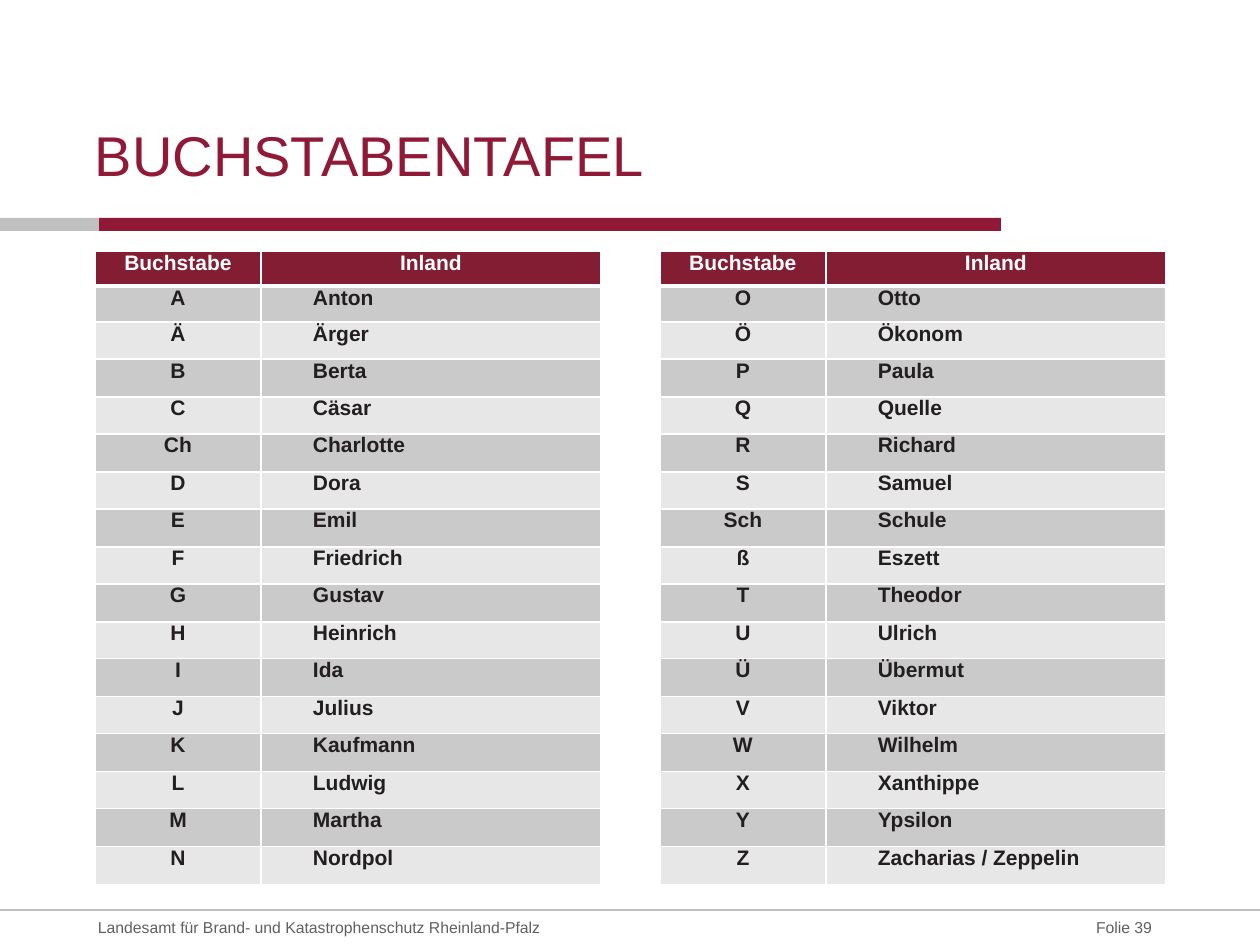
import pptx
import pptx.dml.color
import pptx.enum.shapes
import pptx.enum.text
import pptx.oxml
import pptx.oxml.ns
import pptx.util

RGBColor = pptx.dml.color.RGBColor
ALIGN = pptx.enum.text.PP_ALIGN
ANCHOR = pptx.enum.text.MSO_ANCHOR

WINE = RGBColor(0x8F, 0x19, 0x36)
HEADER = RGBColor(0x83, 0x1D, 0x33)
SILVER = RGBColor(0xC0, 0xC0, 0xC0)
DARK_BAND = RGBColor(0xCB, 0xCA, 0xCB)
LIGHT_BAND = RGBColor(0xE8, 0xE7, 0xE7)
INK = RGBColor(0x23, 0x1F, 0x20)
GREY = RGBColor(0x60, 0x60, 0x60)
WHITE = RGBColor(0xFF, 0xFF, 0xFF)

PAGE_WIDTH, PAGE_HEIGHT = 1260, 945
COLUMNS = [166, 340, 59, 166, 340]
ROWS = [35, 36] + [37, 38] * 7 + [38]
GAP_COLUMN = 2
WORD_INDENT = 52

LEFT_WORDS = [
    ("A", "Anton"), ("Ä", "Ärger"), ("B", "Berta"), ("C", "Cäsar"),
    ("Ch", "Charlotte"), ("D", "Dora"), ("E", "Emil"), ("F", "Friedrich"),
    ("G", "Gustav"), ("H", "Heinrich"), ("I", "Ida"), ("J", "Julius"),
    ("K", "Kaufmann"), ("L", "Ludwig"), ("M", "Martha"), ("N", "Nordpol"),
]
RIGHT_WORDS = [
    ("O", "Otto"), ("Ö", "Ökonom"), ("P", "Paula"), ("Q", "Quelle"),
    ("R", "Richard"), ("S", "Samuel"), ("Sch", "Schule"), ("ß", "Eszett"),
    ("T", "Theodor"), ("U", "Ulrich"), ("Ü", "Übermut"), ("V", "Viktor"),
    ("W", "Wilhelm"), ("X", "Xanthippe"), ("Y", "Ypsilon"),
    ("Z", "Zacharias / Zeppelin"),
]


def px(length):
    """Turn a length in px into EMU."""
    return pptx.util.Emu(round(length * 914400 / 126))


def write_text(frame, text, size=12, color=INK, bold=False, align=ALIGN.LEFT):
    """Write one formatted paragraph into a text frame."""
    para = frame.paragraphs[0]
    para.alignment = align
    span = para.add_run()
    span.text = text
    span.font.name = "Arial"
    span.font.size = pptx.util.Pt(size)
    span.font.bold = bold
    span.font.color.rgb = color


def add_text(page, left, top, width, height, text, anchor=ANCHOR.MIDDLE,
             right_inset=0, **text_format):
    """Add a text box with no inset other than an optional right one."""
    box = page.shapes.add_textbox(px(left), px(top), px(width), px(height))
    frame = box.text_frame
    frame.word_wrap = True
    frame.vertical_anchor = anchor
    frame.margin_left = frame.margin_top = frame.margin_bottom = 0
    frame.margin_right = px(right_inset)
    write_text(frame, text, **text_format)


def add_bar(page, left, top, width, height, color):
    """Add a plain filled bar."""
    bar = page.shapes.add_shape(
        pptx.enum.shapes.MSO_SHAPE.RECTANGLE,
        px(left), px(top), px(width), px(height))
    bar.shadow.inherit = False
    bar.fill.solid()
    bar.fill.fore_color.rgb = color
    bar.line.fill.background()


def add_heading(page, left, top, width, height):
    """Add the title and the two-coloured bar below it."""
    add_text(page, left, top, width, height, "BUCHSTABENTAFEL",
             anchor=ANCHOR.BOTTOM, size=32, color=WINE)
    bar_left, bar_top = left + 4, top + height + 30
    add_bar(page, bar_left, bar_top, 902, 13, WINE)
    add_bar(page, 0, bar_top, bar_left, 13, SILVER)


def set_borders(cell, top, bottom):
    """Give a cell white borders with the stated top and bottom widths."""
    properties = cell._tc.get_or_add_tcPr()
    widths = {"lnL": 1, "lnR": 1, "lnT": top, "lnB": bottom}
    for tag, width in widths.items():
        properties.append(pptx.oxml.parse_xml(
            f'<a:{tag} {pptx.oxml.ns.nsdecls("a")} w="{width * 12700}">'
            f'<a:solidFill><a:srgbClr val="{WHITE}"/></a:solidFill></a:{tag}>'))


def fill_cell(cell, row, column, text):
    """Format one cell by its place in the table."""
    cell.margin_left = cell.margin_right = 0
    cell.margin_top = cell.margin_bottom = 0
    set_borders(cell, 3 if row == 1 else 1, 3 if row == 0 else 1)
    if column == GAP_COLUMN:
        cell.fill.background()
        cell.text_frame.paragraphs[0]._p.append(pptx.oxml.parse_xml(
            f'<a:endParaRPr {pptx.oxml.ns.nsdecls("a")} sz="1200"/>'))
        return
    is_word = row > 0 and column in (1, 4)
    cell.fill.solid()
    cell.fill.fore_color.rgb = (
        HEADER if row == 0 else DARK_BAND if row % 2 else LIGHT_BAND)
    write_text(cell.text_frame, text, bold=True,
               color=INK if row else WHITE,
               align=ALIGN.LEFT if is_word else ALIGN.CENTER)
    if is_word:
        para_properties = cell.text_frame.paragraphs[0]._p.get_or_add_pPr()
        para_properties.set("marL", str(px(WORD_INDENT)))
        para_properties.set("indent", "0")


def add_spelling_table(page, left, top):
    """Add the spelling alphabet as two blocks side by side."""
    table = page.shapes.add_table(
        len(ROWS), len(COLUMNS), px(left), px(top),
        px(sum(COLUMNS)), px(sum(ROWS))).table
    table.first_row = table.horz_banding = False
    for column, width in zip(table.columns, COLUMNS):
        column.width = px(width)
    for row, height in zip(table.rows, ROWS):
        row.height = px(height)
    heads = ("Buchstabe", "Inland")
    pairs = zip([heads] + LEFT_WORDS, [heads] + RIGHT_WORDS)
    for row, (first, second) in enumerate(pairs):
        for column, text in enumerate((*first, "", *second)):
            fill_cell(table.cell(row, column), row, column, text)


def add_footer(page, top, height):
    """Add the rule, the organisation and the slide number."""
    rule = page.shapes.add_connector(
        pptx.enum.shapes.MSO_CONNECTOR.STRAIGHT,
        0, px(top), px(PAGE_WIDTH), px(top))
    rule.line.color.rgb = SILVER
    rule.line.width = pptx.util.Pt(0.75)
    rule._element.spPr.append(pptx.oxml.parse_xml(
        f'<a:effectLst {pptx.oxml.ns.nsdecls("a")}/>'))
    add_text(page, 1000, top, 160, height, "Folie 39", right_inset=8,
             size=9, color=GREY, align=ALIGN.RIGHT)
    add_text(page, 98, top, 694, height,
             "Landesamt für Brand- und Katastrophenschutz Rheinland-Pfalz",
             size=9, color=GREY)


def main():
    """Build the deck and save it."""
    deck = pptx.Presentation()
    deck.slide_width, deck.slide_height = px(PAGE_WIDTH), px(PAGE_HEIGHT)
    page = deck.slides.add_slide(deck.slide_layouts[6])
    add_heading(page, 95, 60, 805, 128)
    add_spelling_table(page, 95, 251)
    add_footer(page, 910, 35)
    deck.save("out.pptx")


if __name__ == "__main__":
    main()
